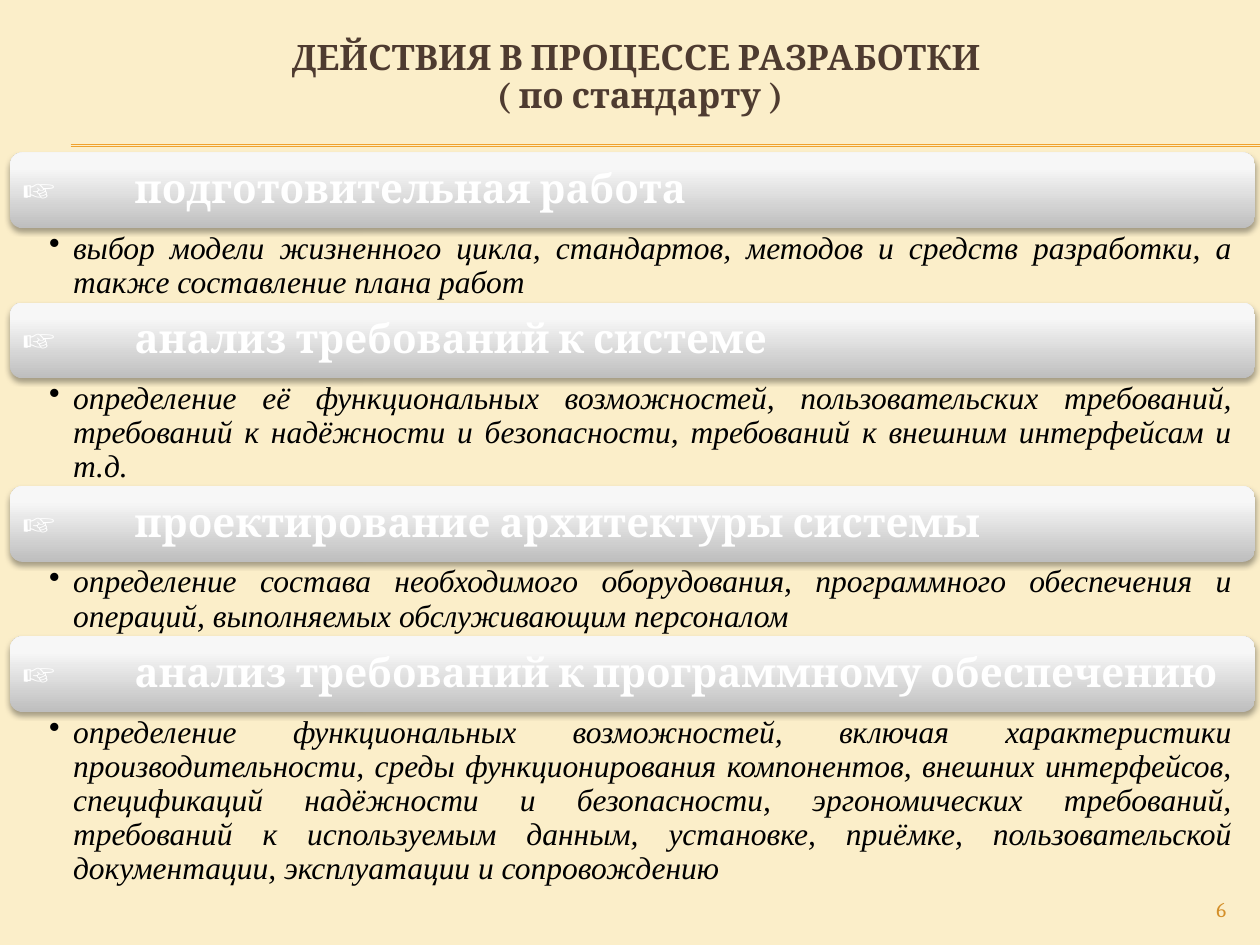
from lxml.etree import SubElement
from pptx import Presentation
from pptx.dml.color import RGBColor
from pptx.enum.shapes import MSO_CONNECTOR as Line, MSO_SHAPE as Shape
from pptx.enum.text import MSO_ANCHOR as Anchor, PP_ALIGN as Align
from pptx.oxml import parse_xml
from pptx.oxml.ns import nsdecls, qn
from pptx.util import Inches, Pt


def rgb(value):
    return RGBColor.from_string(value)


def write(sp, text, size, font, color, align, anchor, insets, spacing=0.9):
    tf = sp.text_frame
    tf.word_wrap = True
    tf.vertical_anchor = anchor
    tf.margin_left, tf.margin_top, tf.margin_right, tf.margin_bottom = [int(i * col) for i in insets]
    tf.text = text
    p = tf.paragraphs[0]
    p.alignment = align
    p.line_spacing = spacing
    for r in p.runs:
        r.font.size = Pt(size)
        r.font.name = font
        r.font.color.rgb = rgb(color)
    return p


prs = Presentation()
prs.slide_width, prs.slide_height = Inches(10), Inches(7.5)
col, row = prs.slide_width / 100, prs.slide_height / 100
s = prs.slides.add_slide(prs.slide_layouts[6])
s.background.fill.solid()
s.background.fill.fore_color.rgb = rgb("FBEEC9")

for y in (15.33, 15.47):
    rule = s.shapes.add_connector(Line.STRAIGHT, int(5.6 * col), int(y * row), int(100 * col), int(y * row))
    rule.line.color.rgb = rgb("F0A22E")
    rule.line.width = Pt(0.75)
    SubElement(rule._element.spPr, qn("a:effectLst"))

number = s.shapes.add_textbox(int(90 * col), int(94.4 * row), int(8.3 * col), int(3.6 * row))
write(number, "6", 12, "Cambria", "D48F29", Align.RIGHT, Anchor.MIDDLE, (1, 0.5, 1, 0.5), 1)

title = s.shapes.add_textbox(int(3.3 * col), int(2.13 * row), int(95 * col), int(12.27 * row))
p = write(title, "ДЕЙСТВИЯ В ПРОЦЕССЕ РАЗРАБОТКИ \v( по стандарту )", 20, "Cambria", "4E3B30",
          Align.CENTER, Anchor.MIDDLE, (1, 0.5, 1, 0.5))
for r in p.runs:
    r.font.bold = True

actions = [
    ("подготовительная работа", 2, Align.LEFT,
     "выбор модели жизненного цикла, стандартов, методов и средств разработки, "
     "а также составление плана работ"),
    ("анализ требований к системе", 3, Align.LEFT,
     "определение её функциональных возможностей, пользовательских требований, "
     "требований к надёжности и безопасности, требований к внешним интерфейсам и т.д."),
    ("проектирование архитектуры системы", 2, Align.JUSTIFY,
     "определение состава необходимого оборудования, программного обеспечения "
     "и операций, выполняемых обслуживающим персоналом"),
    ("анализ требований к программному обеспечению", 5, Align.JUSTIFY,
     "определение функциональных возможностей, включая характеристики производительности, "
     "среды функционирования компонентов, внешних интерфейсов, спецификаций надёжности "
     "и безопасности, эргономических требований, требований к используемым данным, установке, "
     "приёмке, пользовательской документации, эксплуатации и сопровождению"),
]
left, width, bar_height = int(0.8 * col), int(98.8 * col), 8.03
top = 16.13
for name, lines, align, details in actions:
    bar = s.shapes.add_shape(Shape.ROUNDED_RECTANGLE, left, int(top * row), width, int(bar_height * row))
    bar.line.fill.background()
    bar.fill.gradient()
    bar.fill.gradient_angle = 90
    for stop, (position, color) in zip(bar.fill.gradient_stops, ((0, "BEBEBE"), (0.8, "F7F7F7"))):
        stop.position = position
        stop.color.rgb = rgb(color)
    bar._element.spPr.append(parse_xml(
        f'<a:effectLst {nsdecls("a")}><a:outerShdw blurRad="{Pt(3.1)}" dist="{Pt(1.8)}" dir="5400000" '
        'rotWithShape="0"><a:srgbClr val="000000"><a:alpha val="35000"/></a:srgbClr>'
        '</a:outerShdw></a:effectLst>'))
    p = write(bar, "☞\t", 23, "Cambria", "FFFFFF", align, Anchor.MIDDLE, (0.7, 0.7, 0.7, 0.7))
    r = p.add_run()
    r.text = name
    r.font.size, r.font.name, r.font.bold = Pt(23), "Cambria", True
    r.font.color.rgb = rgb("FFFFFF")
    pPr = p._p.get_or_add_pPr()
    pPr.set("marL", str(int(8.9 * col)))
    pPr.set("indent", str(int(-8.9 * col)))
    top += bar_height

    height = 0.8 + 3.53 * lines
    body = s.shapes.add_textbox(left, int(top * row), width, int(height * row))
    p = write(body, details, 18, "Times New Roman", "000000", Align.JUSTIFY, Anchor.TOP, (3.1, 0.3, 1.8, 0.3))
    p.runs[0].font.italic = True
    pPr = p._p.get_or_add_pPr()
    pPr.set("marL", str(int(1.9 * col)))
    pPr.set("indent", str(int(-1.9 * col)))
    SubElement(pPr, qn("a:buChar")).set("char", "•")
    top += height

prs.save("out.pptx")
